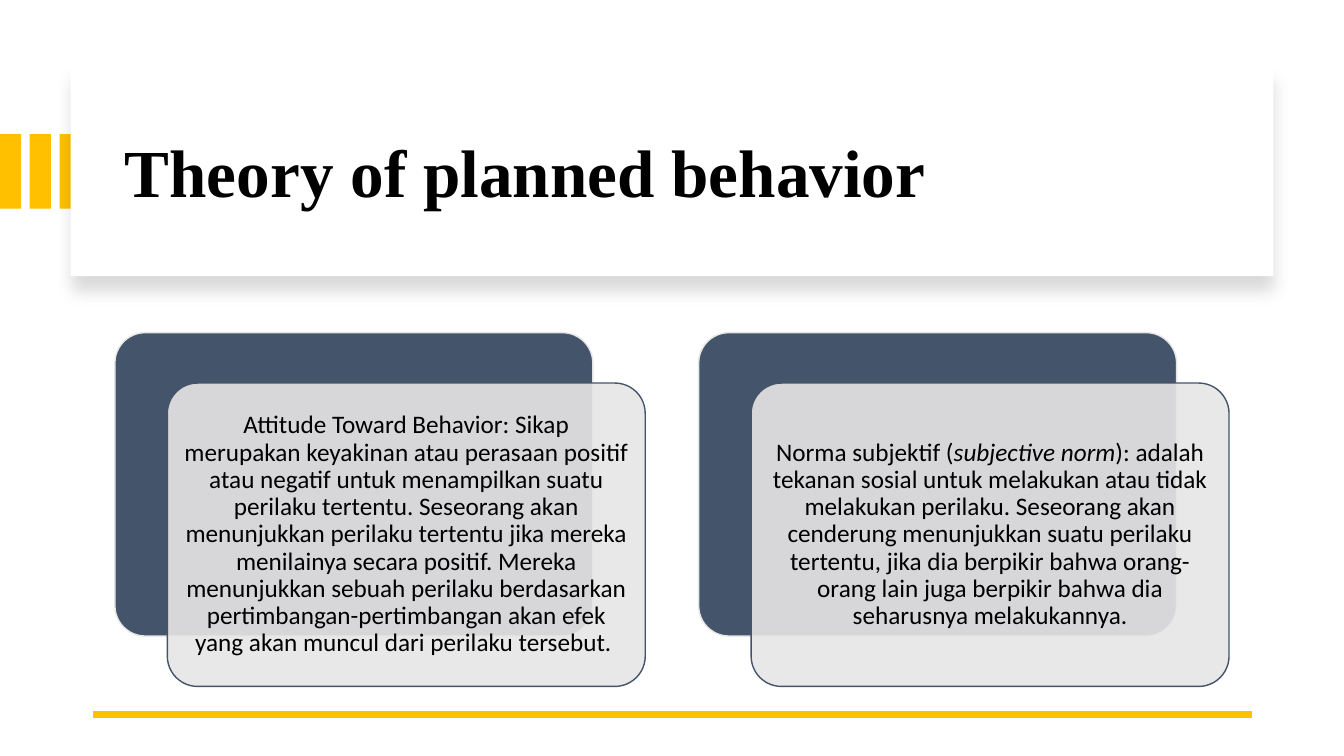
from pptx import Presentation
from pptx.util import Inches, Pt
from pptx.dml.color import RGBColor
from pptx.enum.shapes import MSO_SHAPE as Shape, MSO_CONNECTOR as Line
from pptx.enum.text import PP_ALIGN as Align, MSO_ANCHOR as Anchor
from pptx.oxml import parse_xml
from pptx.oxml.ns import nsdecls, qn
from lxml import etree

TITLE = "Theory of planned behavior"
# Each card is a list of (text, italic) runs.
CARDS = [
    [("Attitude Toward Behavior: Sikap merupakan keyakinan atau perasaan positif "
      "atau negatif untuk menampilkan suatu perilaku tertentu. Seseorang akan "
      "menunjukkan perilaku tertentu jika mereka menilainya secara positif. Mereka "
      "menunjukkan sebuah perilaku berdasarkan pertimbangan-pertimbangan akan efek "
      "yang akan muncul dari perilaku tersebut. ", False)],
    [("Norma subjektif (", False),
     ("subjective norm", True),
     ("): adalah tekanan sosial untuk melakukan atau tidak melakukan perilaku. "
      "Seseorang akan cenderung menunjukkan suatu perilaku tertentu, jika dia "
      "berpikir bahwa orang-orang lain juga berpikir bahwa dia seharusnya "
      "melakukannya.", False)],
]
COLORS = {"gold": "FFC000", "white": "FFFFFF", "navy": "44546A",
          "gray": "E7E6E6", "black": "000000"}

BAR_W, BAR_STEP = 0.21, 0.295
CARD_X, CARD_Y, CARD_W, CARD_H = 1.14, 3.3, 4.74, 3.01
CARD_STEP = 5.79
SHIFT_X, SHIFT_Y = 0.52, 0.5
PAD = 0.09


def color(name):
    return RGBColor.from_string(COLORS[name])


def add_box(slide, kind, box, fill, line=None):
    shape = slide.shapes.add_shape(kind, *map(Inches, box))
    shape.shadow.inherit = False
    shape.fill.solid()
    shape.fill.fore_color.rgb = color(fill)
    if line:
        shape.line.color.rgb = color(line)
        shape.line.width = Pt(1)
    else:
        shape.line.fill.background()
    if kind == Shape.ROUNDED_RECTANGLE:
        shape.adjustments[0] = 0.1
    return shape


def add_text(slide, box, runs, font, size, inset, bold=False, align=Align.LEFT):
    frame = slide.shapes.add_textbox(*map(Inches, box)).text_frame
    frame.word_wrap = True
    frame.vertical_anchor = Anchor.MIDDLE
    frame.margin_left = frame.margin_right = Inches(inset[0])
    frame.margin_top = frame.margin_bottom = Inches(inset[1])
    para = frame.paragraphs[0]
    para.alignment = align
    para.line_spacing = 0.9
    para.font.name = font
    para.font.size = Pt(size)
    para.font.bold = bold
    para.font.color.rgb = color("black")
    for text, italic in runs:
        run = para.add_run()
        run.text = text
        if italic:
            run.font.italic = True


def add_shadow(shape):
    """Cast a soft shadow straight down."""
    effects = shape.element.spPr.find(qn("a:effectLst"))
    effects.append(parse_xml(
        f'<a:outerShdw {nsdecls("a")} blurRad="{Pt(11)}" dist="{Pt(10)}" '
        'dir="5400000" algn="t" rotWithShape="0">'
        f'<a:srgbClr val="{COLORS["black"]}"><a:alpha val="15000"/></a:srgbClr>'
        '</a:outerShdw>'))


def set_alpha(shape, percent):
    tint = shape.element.spPr.find(qn("a:solidFill"))[0]
    etree.SubElement(tint, qn("a:alpha")).set("val", str(percent * 1000))


def add_header(slide):
    for i in range(3):
        add_box(slide, Shape.RECTANGLE, (i * BAR_STEP, 1.33, BAR_W, 0.74), "gold")
    panel = add_box(slide, Shape.RECTANGLE, (0.7, 0.67, 11.93, 2.07), "white")
    add_shadow(panel)
    add_text(slide, (1.14, 0.89, 11.13, 1.7), [(TITLE, False)],
             "Times New Roman", 48, (0.1, 0.05), bold=True)


def add_rule(slide):
    rule = slide.shapes.add_connector(
        Line.STRAIGHT, *map(Inches, (12.42, 7.09, 0.92, 7.09)))
    rule.line.color.rgb = color("gold")
    rule.line.width = Pt(4.5)
    etree.SubElement(rule.element.spPr, qn("a:effectLst"))


def add_card(slide, left, runs):
    add_box(slide, Shape.ROUNDED_RECTANGLE,
            (left, CARD_Y, CARD_W, CARD_H), "navy", "gray")
    x, y = left + SHIFT_X, CARD_Y + SHIFT_Y
    front = add_box(slide, Shape.ROUNDED_RECTANGLE,
                    (x, y, CARD_W, CARD_H), "gray", "navy")
    set_alpha(front, 90)
    add_text(slide, (x + PAD, y + PAD, CARD_W - 2 * PAD, CARD_H - 2 * PAD),
             runs, "Calibri", 18, (0.07, 0.07), align=Align.CENTER)


def main():
    deck = Presentation()
    deck.slide_width, deck.slide_height = Inches(13.33), Inches(7.5)
    slide = deck.slides.add_slide(deck.slide_layouts[6])
    add_header(slide)
    add_rule(slide)
    for i, runs in enumerate(CARDS):
        add_card(slide, CARD_X + i * CARD_STEP, runs)
    deck.save("out.pptx")


if __name__ == "__main__":
    main()
